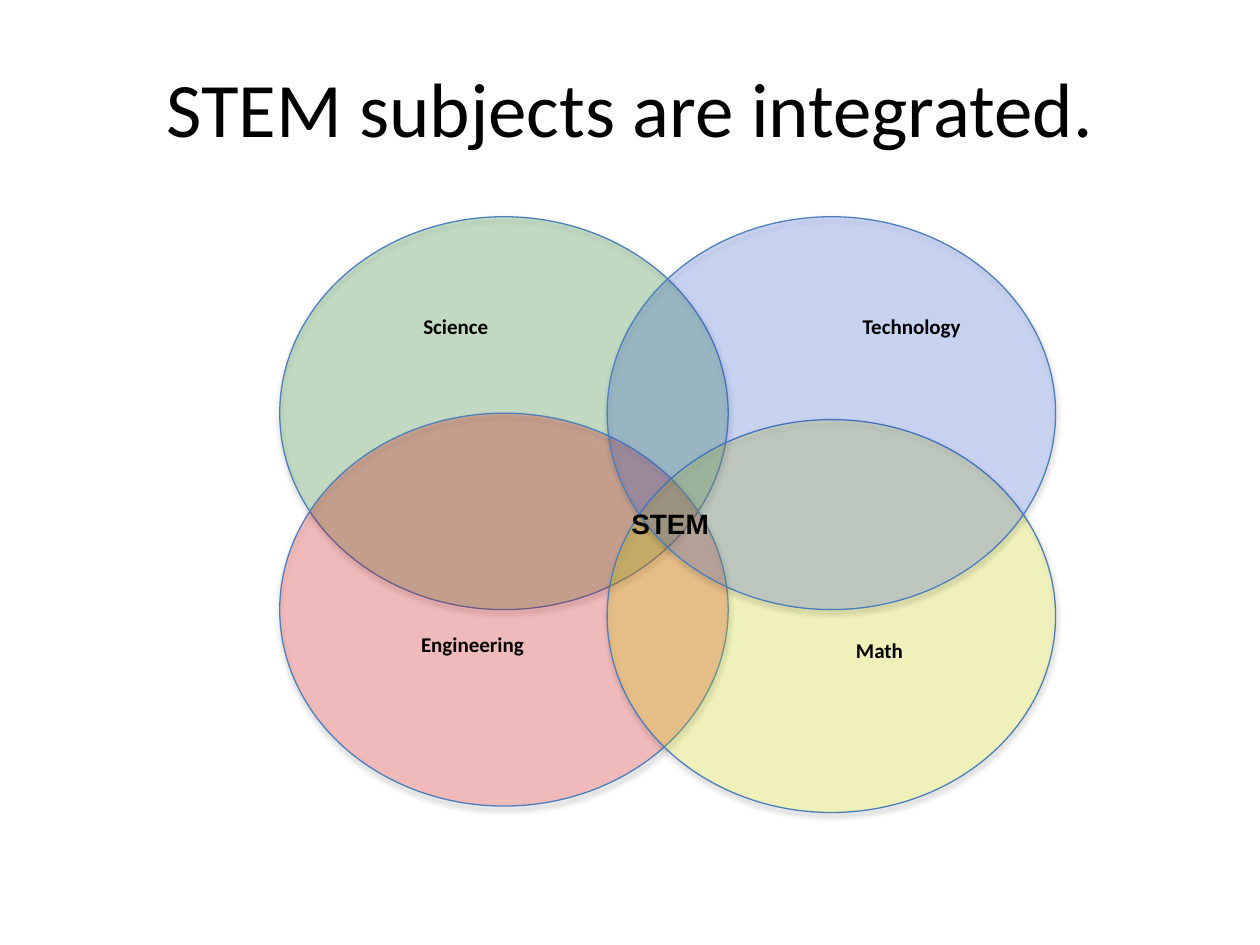
from lxml.etree import SubElement
from pptx import Presentation
from pptx.dml.color import RGBColor
from pptx.enum.shapes import MSO_SHAPE as Shape
from pptx.enum.text import MSO_ANCHOR as Anchor, PP_ALIGN as Align
from pptx.oxml.ns import qn
from pptx.util import Cm, Pt


def rgb(hex_color):
    return RGBColor.from_string(hex_color)


def add_label(shapes, text, left, top, width, height, size, font_name):
    label = shapes.add_textbox(Cm(left), Cm(top), Cm(width), Cm(height))
    label.text_frame.word_wrap = True
    paragraph = label.text_frame.paragraphs[0]
    paragraph.text = text
    paragraph.alignment = Align.CENTER
    paragraph.font.size = Pt(size)
    paragraph.font.name = font_name
    paragraph.font.bold = True
    paragraph.font.color.rgb = rgb("000000")


prs = Presentation()
prs.slide_width, prs.slide_height = Cm(25.4), Cm(19.05)
slide = prs.slides.add_slide(prs.slide_layouts[5])

title = slide.shapes.title
title.left, title.top, title.width, title.height = Cm(0), Cm(0.94), Cm(25.4), Cm(2.44)
title.text_frame.vertical_anchor = Anchor.MIDDLE
heading = title.text_frame.paragraphs[0]
heading.text = "STEM subjects are integrated."
heading.alignment = Align.CENTER
heading.font.size = Pt(44)
heading.font.name = "Calibri"
heading.font.color.rgb = rgb("000000")

LEFT_COLUMN, RIGHT_COLUMN = 5.64, 12.24
TOP_ROW = 4.37
# subject, circle left and top, fill, opacity %, label left, top and width
subjects = [
    ("Science", LEFT_COLUMN, TOP_ROW, "008000", 19, 6.93, 6.2, 4.52),
    ("Engineering", LEFT_COLUMN, 8.33, "FF0000", 21, 6.3, 12.6, 6.45),
    ("Math", RIGHT_COLUMN, 8.46, "FFFF00", 21, 15.47, 12.73, 4.52),
    ("Technology", RIGHT_COLUMN, TOP_ROW, "3366FF", 20, 15.47, 6.2, 5.82),
]
for subject, left, top, color, opacity, label_left, label_top, label_width in subjects:
    group = slide.shapes.add_group_shape()
    circle = group.shapes.add_shape(Shape.OVAL, Cm(left), Cm(top), Cm(9.04), Cm(7.92))
    circle.fill.solid()
    circle.fill.fore_color.rgb = rgb(color)
    circle.line.color.rgb = rgb("4B7EBC")
    circle.line.width = Pt(0.75)
    circle.shadow.inherit = False

    properties = circle.element.spPr
    fill_color = properties.find(qn("a:solidFill"))[0]
    SubElement(fill_color, qn("a:alpha"), val=str(opacity * 1000))
    shadow = SubElement(
        properties.find(qn("a:effectLst")), qn("a:outerShdw"),
        blurRad=str(Pt(3.1)), dist=str(Pt(1.8)), dir="5400000", rotWithShape="0",
    )
    shadow_color = SubElement(shadow, qn("a:srgbClr"), val="000000")
    SubElement(shadow_color, qn("a:alpha"), val="35000")

    add_label(group.shapes, subject, label_left, label_top, label_width, 1.83, 12, "Calibri")

add_label(slide.shapes, "STEM", 12.34, 10.08, 2.34, 0.97, 16, "Arial")

prs.save("out.pptx")
